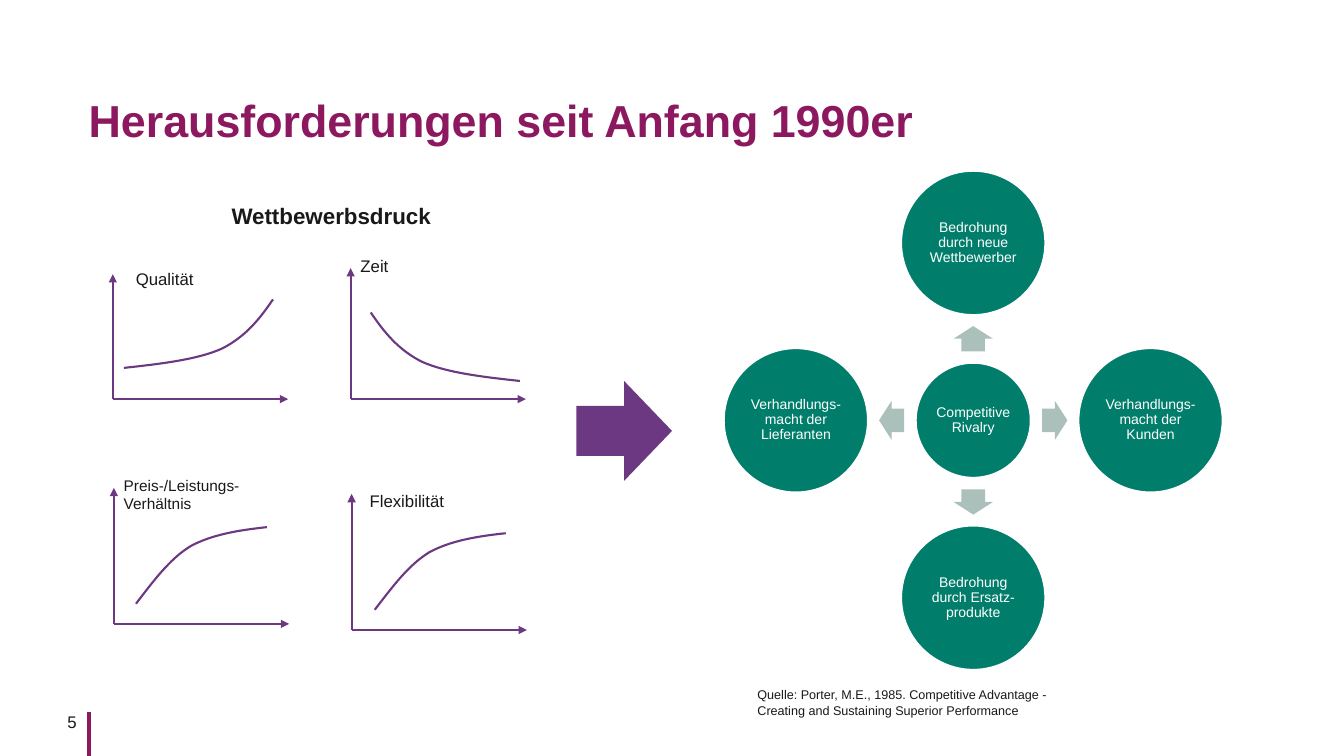
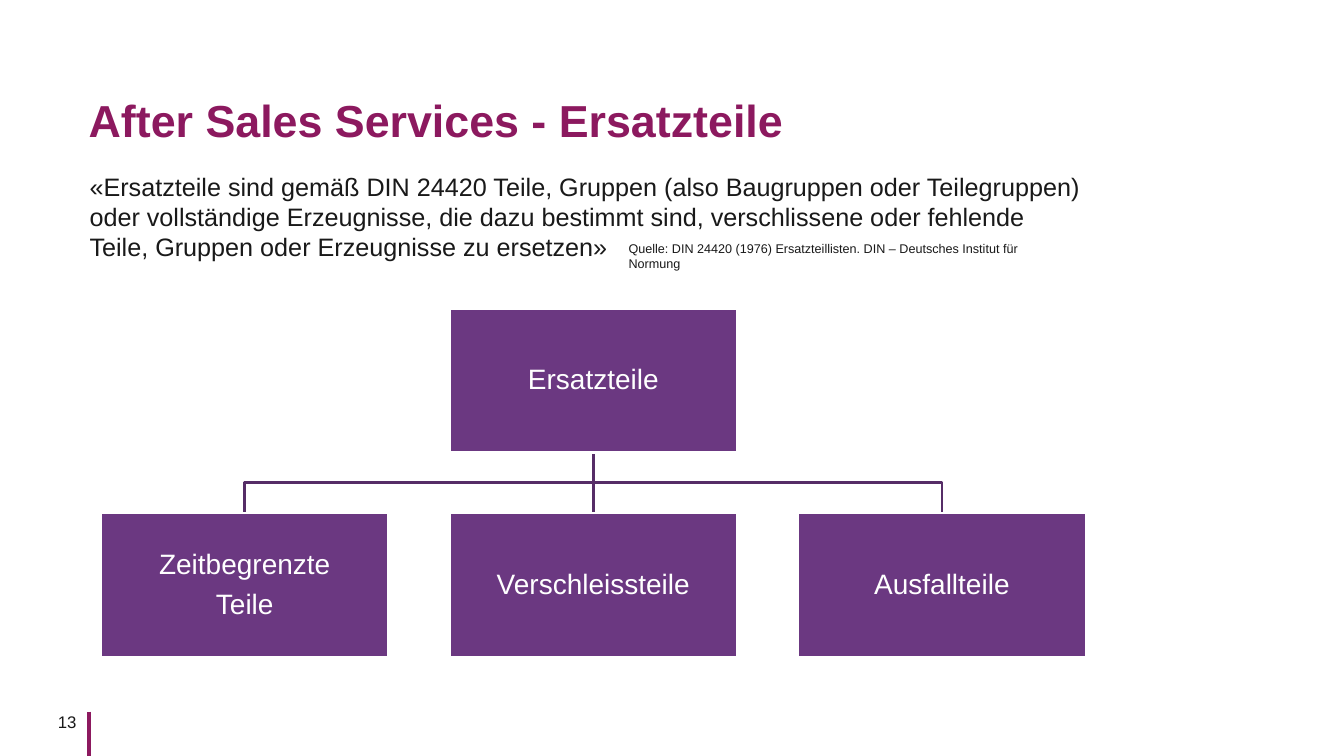
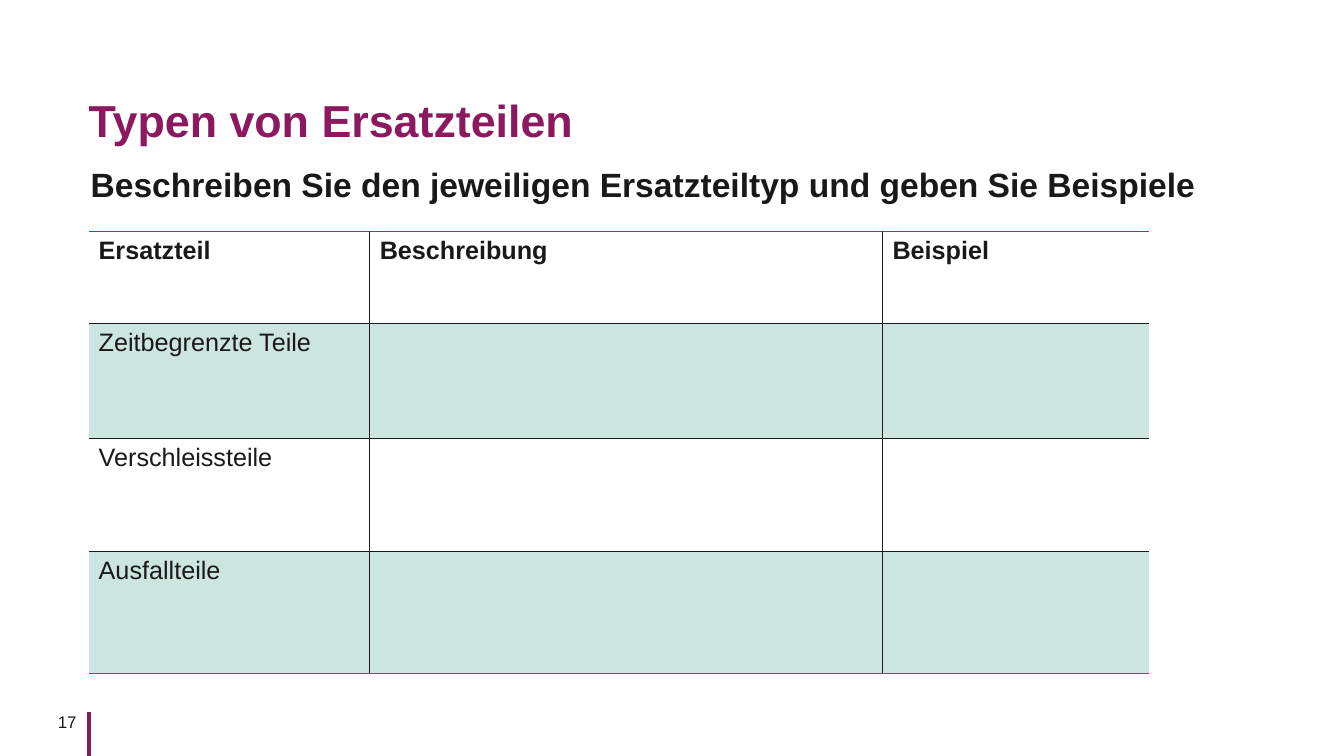
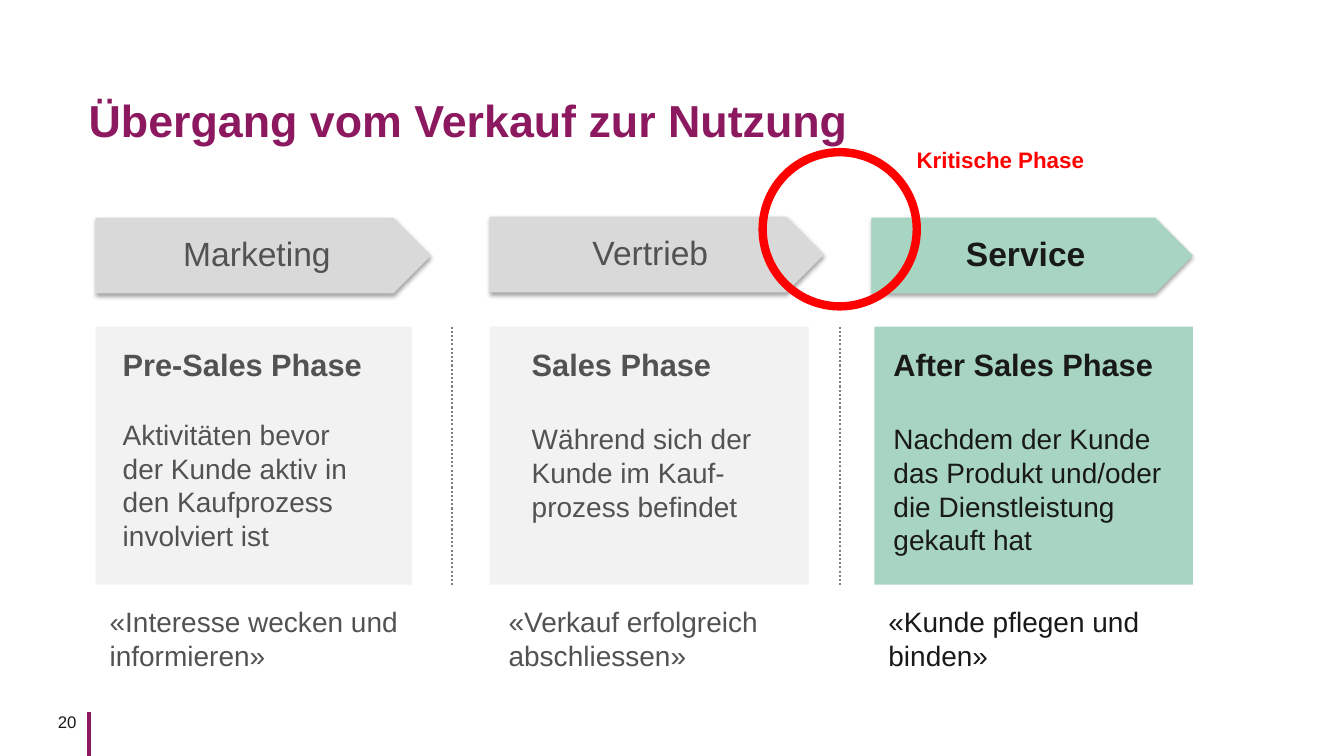
from lxml.etree import SubElement
from pptx import Presentation
from pptx.dml.color import RGBColor
from pptx.enum.dml import MSO_LINE
from pptx.enum.shapes import MSO_CONNECTOR, MSO_SHAPE as SHAPE
from pptx.enum.text import MSO_ANCHOR as ANCHOR, MSO_AUTO_SIZE, PP_ALIGN as ALIGN
from pptx.oxml.ns import qn
from pptx.util import Pt

PX = 9144
INK, GREY, BERRY, PURPLE, PLUM = "191919", "525252", "8C195F", "6B3881", "562D67"
GREEN, SAGE, MINT, PALE = "007E6B", "ABC0BA", "A7D5C2", "CCE5E1"
SILVER, MIST, DOTS, RED, WHITE = "D9D9D9", "F2F2F2", "808080", "FF0000", "FFFFFF"
TITLE_BOX = (88, 76, 1209, 75)
NUMBER_BOX = (29, 706, 59, 20)
FOOT_RULE = (88, 706, 88, 750)
CENTERED = dict(alignment=ALIGN.CENTER, line_spacing=0.9)

GROWTH = [(0, 0), (36, -4), (72, -8), (97, -19), (121, -31), (135, -49), (148, -68)]
DECAY = [(-x, y) for x, y in GROWTH]
SATURATION = [(0, 0), (17, -22), (33, -44), (54, -57), (76, -69), (103, -73), (130, -76)]
AXIS_LENGTH = 174
PRESSURES = [
    dict(label=["Qualität"], box=(125, 262, 136, 30), size=12,
         origin=(112, 396), height=124, curve=GROWTH, start=(123, 365)),
    dict(label=["Zeit"], box=(348, 249, 84, 30), size=12,
         origin=(348, 396), height=130, curve=DECAY, start=(516, 378)),
    dict(label=["Preis-/Leistungs-", "Verhältnis"], box=(113, 467, 236, 47), size=11,
         origin=(113, 619), height=135, curve=SATURATION, start=(135, 599)),
    dict(label=["Flexibilität"], box=(357, 482, 165, 30), size=12,
         origin=(349, 625), height=135, curve=SATURATION, start=(372, 605)),
]
RIVALRY = "Competitive Rivalry"
RIVALRY_CENTER = (966, 417)
FORCES = [
    ("Bedrohung durch neue Wettbewerber", 0, -1, 270),
    ("Verhandlungs-macht der Kunden", 1, 0, 0),
    ("Bedrohung durch Ersatz-produkte", 0, 1, 90),
    ("Verhandlungs-macht der Lieferanten", -1, 0, 180),
]
PORTER = ("Quelle: Porter, M.E., 1985. Competitive Advantage - "
          "Creating and Sustaining Superior Performance")

DEFINITION = [
    "«Ersatzteile sind gemäß DIN 24420 Teile, Gruppen (also Baugruppen oder Teilegruppen)",
    "oder vollständige Erzeugnisse, die dazu bestimmt sind, verschlissene oder fehlende",
    "Teile, Gruppen oder Erzeugnisse zu ersetzen»",
]
DIN = "Quelle: DIN 24420 (1976) Ersatzteillisten. DIN – Deutsches Institut für Normung"
PART_ROOT = ["Ersatzteile"]
PART_TYPES = [["Zeitbegrenzte", "Teile"], ["Verschleissteile"], ["Ausfallteile"]]

TASK = "Beschreiben Sie den jeweiligen Ersatzteiltyp und geben Sie Beispiele"
WORKSHEET = [
    ("Ersatzteil", "Beschreibung", "Beispiel"),
    ("Zeitbegrenzte Teile", "", ""),
    ("Verschleissteile", "", ""),
    ("Ausfallteile", "", ""),
]
COLUMN_WIDTHS = (279, 509, 265)
ROW_HEIGHTS = (91, 114, 112, 121)

PHASES = [
    dict(step="Marketing", arrow=(95, 216, 333, 75), panel=(95, 314), name="Pre-Sales Phase",
         note=(112, 280), gap=25, goal_left=99, ink=GREY, fills=(SILVER, MIST),
         about=["Aktivitäten bevor", "der Kunde aktiv in", "den Kaufprozess involviert ist"],
         goal=["«Interesse wecken und informieren»"]),
    dict(step="Vertrieb", arrow=(486, 215, 332, 75), panel=(486, 317), name="Sales Phase",
         note=(518, 253), gap=28, goal_left=495, ink=GREY, fills=(SILVER, MIST),
         about=["Während sich der Kunde im Kauf-", "prozess befindet"],
         goal=["«Verkauf erfolgreich", "abschliessen»"]),
    dict(step="Service", arrow=(865, 216, 319, 75), panel=(868, 316), name="After Sales Phase",
         note=(877, 307), gap=28, goal_left=872, ink=INK, fills=(MINT, MINT),
         about=["Nachdem der Kunde das Produkt und/oder die Dienstleistung gekauft hat"],
         goal=["«Kunde pflegen und binden»"]),
]
PANEL_TOP, PANEL_HEIGHT = 324, 256
DIVIDERS = (449, 834)


def px(*lengths):
    return [round(length * PX) for length in lengths]


def hue(code):
    return RGBColor.from_string(code)


def apply(target, values):
    for name, value in values.items():
        setattr(target, name, value)


def write(frame, lines, size=12, color=INK, bold=False, margins=(10, 5, 10, 5),
          anchor=ANCHOR.TOP, **layout):
    left, top, right, bottom = px(*margins)
    apply(frame, dict(word_wrap=True, auto_size=MSO_AUTO_SIZE.NONE, vertical_anchor=anchor,
                      margin_left=left, margin_top=top, margin_right=right,
                      margin_bottom=bottom))
    for index, line in enumerate(lines):
        text, changes = line if isinstance(line, tuple) else (line, {})
        style = dict(size=size, bold=bold, gap=0) | changes
        paragraph = frame.paragraphs[0] if index == 0 else frame.add_paragraph()
        paragraph.text = text
        apply(paragraph, layout)
        if style["gap"]:
            paragraph.space_before = Pt(style["gap"])
        apply(paragraph.font, dict(name="Arial", size=Pt(style["size"]), bold=style["bold"]))
        paragraph.font.color.rgb = hue(color)


def text_box(slide, box, lines, **style):
    write(slide.shapes.add_textbox(*px(*box)).text_frame, lines, **style)


def outline(shape, color, width):
    shape.line.color.rgb = hue(color)
    shape.line.width = Pt(width)


def block(slide, kind, box, fill=None, border=None):
    shape = slide.shapes.add_shape(kind, *px(*box))
    shape.shadow.inherit = False
    if fill:
        shape.fill.solid()
        shape.fill.fore_color.rgb = hue(fill)
    else:
        shape.fill.background()
    if border:
        outline(shape, *border)
    else:
        shape.line.fill.background()
    return shape


def rule(slide, ends, color, width, arrow=False, dash=None):
    line = slide.shapes.add_connector(MSO_CONNECTOR.STRAIGHT, *px(*ends))
    outline(line, color, width)
    if dash:
        line.line.dash_style = dash
    if arrow:
        SubElement(line.line._get_or_add_ln(), qn("a:tailEnd"), type="triangle")
    SubElement(line.element.spPr, qn("a:effectLst"))


def open_path(slide, points, color, width):
    start, *rest = [px(*point) for point in points]
    builder = slide.shapes.build_freeform(*start, scale=1.0)
    builder.add_line_segments(rest, close=False)
    path = builder.convert_to_shape()
    path.shadow.inherit = False
    path.fill.background()
    outline(path, color, width)


def bezier(knots, steps=16):
    points = [knots[0]]
    for first in range(0, len(knots) - 1, 3):
        controls = knots[first:first + 4]
        for step in range(1, steps + 1):
            t = step / steps
            weights = ((1 - t) ** 3, 3 * t * (1 - t) ** 2, 3 * t ** 2 * (1 - t), t ** 3)
            points.append(tuple(sum(w * c[axis] for w, c in zip(weights, controls))
                                for axis in (0, 1)))
    return points


def around(x, y, width, height):
    return x - width / 2, y - height / 2, width, height


def new_slide(deck, title, number):
    slide = deck.slides.add_slide(deck.slide_layouts[5])
    heading = slide.shapes.title
    apply(heading, dict(zip(("left", "top", "width", "height"), px(*TITLE_BOX))))
    write(heading.text_frame, [title], size=32, color=BERRY, bold=True, margins=(0, 0, 0, 0),
          anchor=ANCHOR.MIDDLE, alignment=ALIGN.LEFT, line_spacing=1.2)
    rule(slide, FOOT_RULE, BERRY, 3)
    text_box(slide, NUMBER_BOX, [str(number)], margins=(0, 0, 12, 0), alignment=ALIGN.RIGHT)
    return slide


def force_circle(slide, x, y, diameter, text):
    circle = block(slide, SHAPE.OVAL, around(x, y, diameter, diameter), GREEN, (WHITE, 2))
    write(circle.text_frame, [text], size=10, color=WHITE, margins=(1, 1, 1, 1),
          anchor=ANCHOR.MIDDLE, **CENTERED)


def challenges(deck):
    slide = new_slide(deck, "Herausforderungen seit Anfang 1990er", 5)
    text_box(slide, (220, 196, 240, 37), ["Wettbewerbsdruck"], size=16, bold=True)
    block(slide, SHAPE.RIGHT_ARROW, (572, 378, 95, 99), PURPLE)
    for pressure in PRESSURES:
        x, y = pressure["origin"]
        for tip in ((x, y - pressure["height"]), (x + AXIS_LENGTH, y)):
            rule(slide, (x, y, *tip), PURPLE, 1.5, arrow=True)
        left, base = pressure["start"]
        knots = [(left + dx, base + dy) for dx, dy in pressure["curve"]]
        open_path(slide, bezier(knots), PURPLE, 1.5)
        text_box(slide, pressure["box"], pressure["label"], size=pressure["size"])
    text_box(slide, (742, 677, 337, 40), [PORTER], size=9)

    x, y = RIVALRY_CENTER
    force_circle(slide, x, y, 115, RIVALRY)
    for text, dx, dy, turn in FORCES:
        pointer = block(slide, SHAPE.RIGHT_ARROW,
                        around(x + 81 * dx, y + 81 * dy, 25, 39), SAGE)
        pointer.adjustments[0], pointer.adjustments[1] = 0.6, 0.5
        pointer.rotation = turn
        force_circle(slide, x + 176 * dx, y + 176 * dy, 144, text)


def spare_parts(deck):
    slide = new_slide(deck, "After Sales Services - Ersatzteile", 13)
    left, step, width, height = 100, 346, 286, 143
    root_top, type_top = 306, 509
    lefts = [left + step * column for column in range(len(PART_TYPES))]
    centers = [x + width / 2 for x in lefts]
    root_bottom = root_top + height
    bus = (root_bottom + type_top) / 2
    open_path(slide, [(centers[0], type_top), (centers[0], bus),
                      (centers[-1], bus), (centers[-1], type_top)], PLUM, 2)
    rule(slide, (centers[1], root_bottom, centers[1], type_top), PLUM, 2)
    parts = [(lefts[1], root_top, PART_ROOT)]
    parts += [(x, type_top, lines) for x, lines in zip(lefts, PART_TYPES)]
    for x, top, lines in parts:
        part = block(slide, SHAPE.RECTANGLE, (x, top, width, height), PURPLE, (WHITE, 2))
        write(part.text_frame, lines, size=20, color=WHITE, margins=(1, 1, 1, 1),
              anchor=ANCHOR.MIDDLE, space_after=Pt(7), **CENTERED)
    text_box(slide, (79, 165, 1078, 101), DEFINITION, size=18)
    text_box(slide, (614, 234, 442, 40), [DIN], size=9)


def cell_borders(cell, colors):
    properties = cell._tc.get_or_add_tcPr()
    for side, color in colors.items():
        edge = SubElement(properties, qn(f"a:ln{side}"), w=str(Pt(1)))
        if color:
            SubElement(SubElement(edge, qn("a:solidFill")), qn("a:srgbClr"), val=color)
        else:
            SubElement(edge, qn("a:noFill"))


def worksheet(deck):
    slide = new_slide(deck, "Typen von Ersatzteilen", 17)
    text_box(slide, (78, 159, 1160, 60), [TASK], size=24, bold=True, margins=(12, 4, 12, 12))
    rows, columns = len(ROW_HEIGHTS), len(COLUMN_WIDTHS)
    box = (88, 230, sum(COLUMN_WIDTHS), sum(ROW_HEIGHTS))
    table = slide.shapes.add_table(rows, columns, *px(*box)).table
    apply(table, dict(first_row=False, horz_banding=False))
    style_id = table._tbl.tblPr.find(qn("a:tableStyleId"))
    style_id.text = "{2D5ABB26-0587-4C30-8999-92F81FD0307C}"
    for column, width in zip(table.columns, px(*COLUMN_WIDTHS)):
        column.width = width
    for row, height in zip(table.rows, px(*ROW_HEIGHTS)):
        row.height = height
    for r, entries in enumerate(WORKSHEET):
        for c, entry in enumerate(entries):
            cell = table.cell(r, c)
            cell_borders(cell, dict(L=INK if c else None,
                                    R=INK if c < columns - 1 else None,
                                    T=INK if r else GREEN,
                                    B=INK if r < rows - 1 else GREEN))
            if r % 2:
                cell.fill.solid()
                cell.fill.fore_color.rgb = hue(PALE)
            else:
                cell.fill.background()
            paragraph = cell.text_frame.paragraphs[0]
            paragraph.text = entry
            apply(paragraph.font, dict(name="Arial", size=Pt(18), bold=r == 0))
            paragraph.font.color.rgb = hue(INK)


def drop_shadow(shape):
    effects = shape.element.spPr.find(qn("a:effectLst"))
    shadow = SubElement(effects, qn("a:outerShdw"), blurRad=str(Pt(3.1)), dist=str(Pt(1.8)),
                        dir="5400000", rotWithShape="0")
    tint = SubElement(shadow, qn("a:srgbClr"), val="000000")
    SubElement(tint, qn("a:alpha"), val="35000")


def transition(deck):
    slide = new_slide(deck, "Übergang vom Verkauf zur Nutzung", 20)
    for phase in PHASES:
        ink = phase["ink"]
        arrow_fill, panel_fill = phase["fills"]
        step = block(slide, SHAPE.PENTAGON, phase["arrow"], arrow_fill)
        drop_shadow(step)
        write(step.text_frame, [phase["step"]], size=24, color=ink, bold=ink == INK,
              margins=(10, 4, 4, 4), anchor=ANCHOR.MIDDLE, **CENTERED)
        left, width = phase["panel"]
        block(slide, SHAPE.RECTANGLE, (left, PANEL_TOP, width, PANEL_HEIGHT), panel_fill)
        first, *others = phase["about"]
        lines = [(phase["name"], dict(size=22, bold=True)), (first, dict(gap=phase["gap"]))]
        left, width = phase["note"]
        text_box(slide, (left, 338, width, 222), lines + others, size=20, color=ink)
        text_box(slide, (phase["goal_left"], 595, 307, 77), phase["goal"], size=20, color=ink)
    for x in DIVIDERS:
        rule(slide, (x, PANEL_TOP, x, PANEL_TOP + PANEL_HEIGHT), DOTS, 1.5,
             dash=MSO_LINE.ROUND_DOT)
    block(slide, SHAPE.OVAL, (757, 151, 153, 153), border=(RED, 6))
    text_box(slide, (890, 140, 206, 37), ["Kritische Phase"], size=16, color=RED, bold=True,
             alignment=ALIGN.CENTER)


def main():
    deck = Presentation()
    deck.slide_width, deck.slide_height = px(1334, 750)
    for build in (challenges, spare_parts, worksheet, transition):
        build(deck)
    deck.save("out.pptx")


if __name__ == "__main__":
    main()
